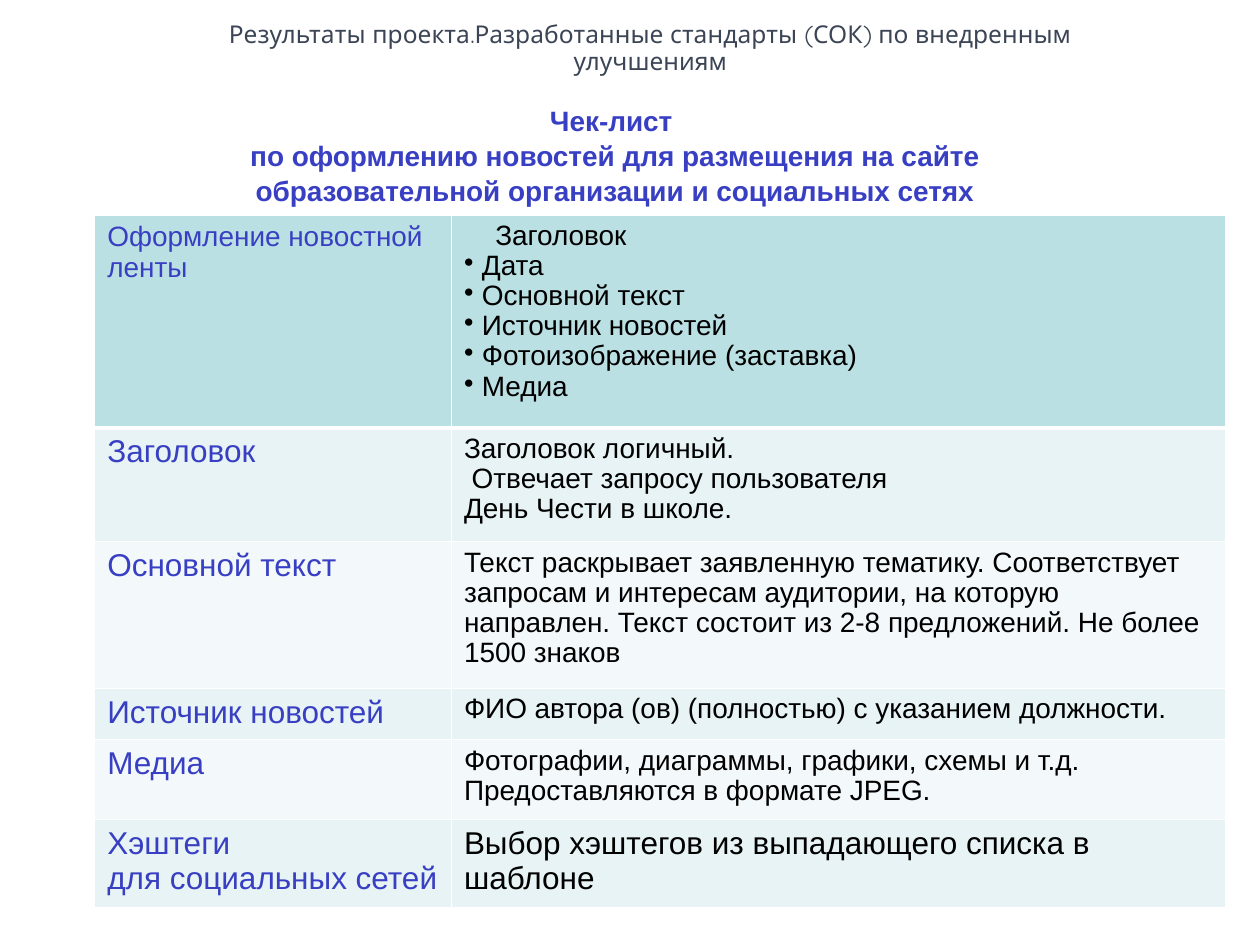
"""Build the news checklist slide with its table of rules."""
from lxml.etree import SubElement
from pptx import Presentation
from pptx.dml.color import RGBColor
from pptx.enum.text import PP_ALIGN
from pptx.oxml import parse_xml
from pptx.oxml.ns import nsdecls, qn
from pptx.util import Cm, Pt

COLORS = {"slate": "3B4555", "blue": "383FC2", "black": "000000",
          "white": "FFFFFF", "head": "BBE0E3", "odd": "E7F3F4", "even": "F3F9FA"}
HEIGHTS = [4.3, 2.29, 2.96, 1.03, 1.61, 1.75]
WIDTHS = [7.19, 15.6]
TITLE = "Результаты проекта.Разработанные стандарты (СОК) по внедренным улучшениям"
CHECK = ["Чек-лист ",
         "по оформлению новостей для размещения на сайте "
         "образовательной организации и социальных сетях"]
PARTS = ["Дата ", "Основной текст ", "Источник новостей ",
         "Фотоизображение (заставка) ", "Медиа"]
ROWS = [
    (["Оформление новостной ленты"], 16, ["Заголовок "], 16),
    (["Заголовок"], 18,
     ["Заголовок логичный.", " Отвечает запросу пользователя", "День Чести в школе."], 16),
    (["Основной текст "], 18,
     ["Текст раскрывает заявленную тематику. Соответствует запросам и интересам "
      "аудитории, на которую направлен. Текст состоит из 2-8 предложений. "
      "Не более 1500 знаков"], 16),
    (["Источник новостей"], 18,
     ["ФИО автора (ов) (полностью) с указанием должности."], 16),
    (["Медиа"], 18,
     ["Фотографии, диаграммы, графики, схемы и т.д. Предоставляются в формате JPEG."], 16),
    (["Хэштеги ", "для социальных сетей"], 18,
     ["Выбор хэштегов из выпадающего списка в шаблоне "], 18),
]


def rgb(name):
    """Return the named colour."""
    return RGBColor.from_string(COLORS[name])


def add_line(frame, text, size, color, font="Arial", bold=False,
             align=PP_ALIGN.LEFT, space=1.0):
    """Add one paragraph with one run, using the first one while it is empty."""
    first = frame.paragraphs[0]
    para = frame.add_paragraph() if first.runs else first
    para.alignment = align
    para.line_spacing = space
    run = para.add_run()
    run.text = text
    run.font.size = Pt(size)
    run.font.name = font
    run.font.bold = bold
    run.font.color.rgb = rgb(color)
    return para


def indent(para, left, hang=0.0):
    """Indent a paragraph, with a bullet when it hangs."""
    props = para._p.get_or_add_pPr()
    props.set("marL", str(Cm(left)))
    props.set("indent", str(-Cm(hang)))
    if hang:
        SubElement(props, qn("a:buChar")).set("char", "•")


def add_text(slide, box, lines, **style):
    """Add a wrapped, centred text box."""
    frame = slide.shapes.add_textbox(*map(Cm, box)).text_frame
    frame.word_wrap = True
    for text in lines:
        add_line(frame, text, align=PP_ALIGN.CENTER, **style)


def set_edges(cell, top, bottom):
    """Give a cell white borders."""
    props = cell._tc.get_or_add_tcPr()
    edges = {"lnL": 1, "lnR": 1, "lnT": top, "lnB": bottom}
    for spot, (tag, width) in enumerate(edges.items()):
        props.insert(spot, parse_xml(
            f'<a:{tag} {nsdecls("a")} w="{Pt(width)}"><a:solidFill>'
            f'<a:srgbClr val="{COLORS["white"]}"/></a:solidFill></a:{tag}>'))


def fill_cell(cell, row, lines, size, color, space):
    """Write and paint one cell."""
    for text in lines:
        add_line(cell.text_frame, text, size, color, space=space)
    cell.fill.solid()
    cell.fill.fore_color.rgb = rgb("head" if row == 0 else "odd" if row % 2 else "even")
    set_edges(cell, 3 if row == 1 else 1, 3 if row == 0 else 1)


def add_rules(slide):
    """Add the table of checklist rules."""
    frame = slide.shapes.add_table(len(ROWS), len(WIDTHS), Cm(1.91), Cm(4.33),
                                   Cm(sum(WIDTHS)), Cm(sum(HEIGHTS)))
    table = frame.table
    for col, width in zip(table.columns, WIDTHS):
        col.width = Cm(width)
    for row, (height, (name, big, rule, size)) in enumerate(zip(HEIGHTS, ROWS)):
        table.rows[row].height = Cm(height)
        fill_cell(table.cell(row, 0), row, name, big, "blue", 1.0)
        fill_cell(table.cell(row, 1), row, rule, size, "black", 0.97 if size == 16 else 1.0)
    parts = table.cell(0, 1).text_frame
    indent(parts.paragraphs[0], 0.63)
    for text in PARTS:
        indent(add_line(parts, text, 16, "black", space=0.97), 0.36, 0.36)


def main():
    """Build and save the slide."""
    deck = Presentation()
    deck.slide_width, deck.slide_height = Cm(25.4), Cm(19.05)
    slide = deck.slides.add_slide(deck.slide_layouts[6])
    add_text(slide, (3.28, 0.33, 19.66, 2.24), [TITLE], size=14, color="slate",
             font="Quicksand", space=0.9)
    add_text(slide, (3.5, 1.93, 17.8, 2.31), CHECK, size=16, color="blue",
             bold=True, space=1.04)
    add_rules(slide)
    deck.save("out.pptx")


if __name__ == "__main__":
    main()
